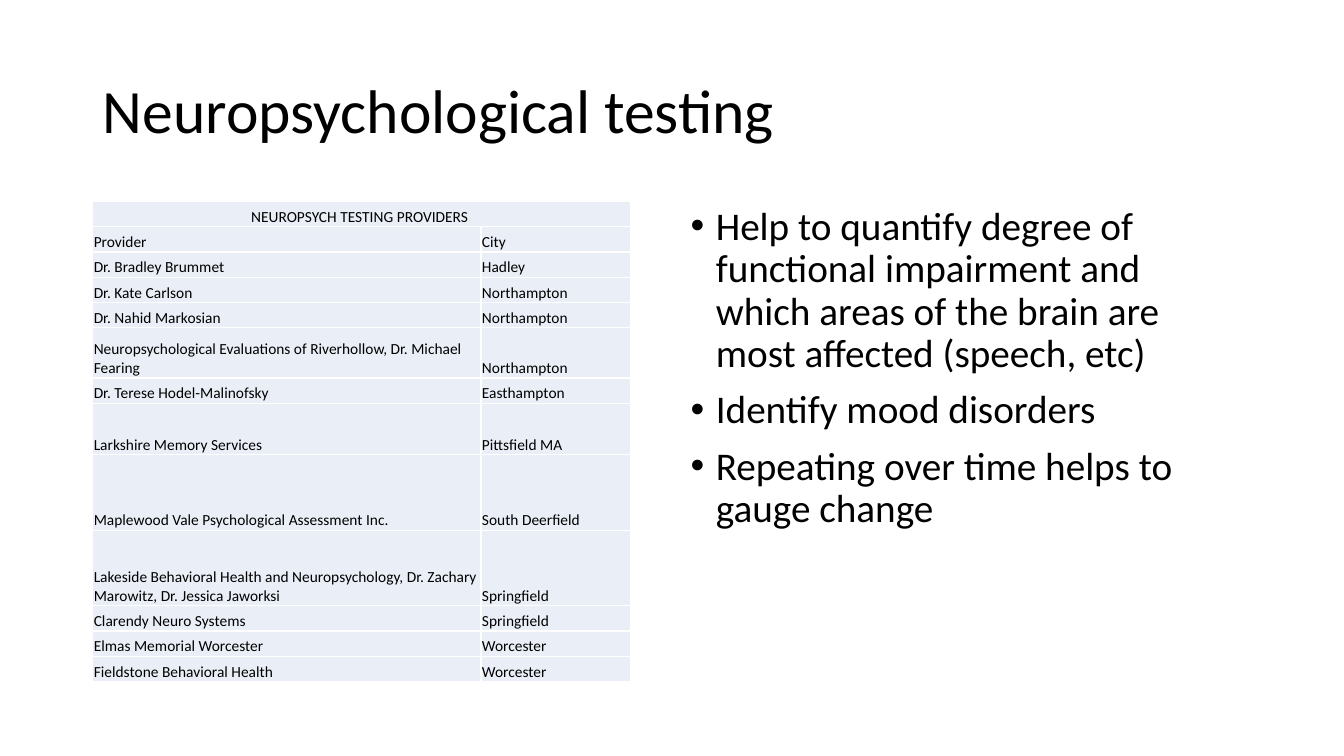
from lxml import etree
from pptx import Presentation
from pptx.dml.color import RGBColor
from pptx.enum.text import MSO_ANCHOR as Anchor, MSO_AUTO_SIZE as AutoSize, PP_ALIGN as Align
from pptx.oxml import parse_xml
from pptx.oxml.ns import nsdecls, qn
from pptx.util import Inches, Pt

FONT = "Calibri"
BLACK, WHITE, PALE_BLUE = "000000", "FFFFFF", "EAEFF7"

TABLE_TITLE = "NEUROPSYCH TESTING PROVIDERS "
# Provider, city, row height
PROVIDERS = [
    ("Provider", "City", 0.25),
    ("Dr. Bradley Brummet", "Hadley", 0.25),
    ("Dr. Kate Carlson", "Northampton", 0.25),
    ("Dr. Nahid Markosian", "Northampton", 0.25),
    ("Neuropsychological Evaluations of Riverhollow, Dr. Michael Fearing", "Northampton", 0.5),
    ("Dr. Terese Hodel-Malinofsky", "Easthampton", 0.25),
    ("Larkshire Memory Services", "Pittsfield MA", 0.51),
    ("Maplewood Vale Psychological Assessment Inc.", "South Deerfield", 0.75),
    ("Lakeside Behavioral Health and Neuropsychology, Dr. Zachary Marowitz, Dr. Jessica Jaworksi",
     "Springfield", 0.75),
    ("Clarendy Neuro Systems", "Springfield", 0.25),
    ("Elmas Memorial Worcester", "Worcester", 0.25),
    ("Fieldstone Behavioral Health", "Worcester", 0.25),
]
POINTS = [
    "Help to quantify degree of functional impairment and which areas of the brain are "
    "most affected (speech, etc)",
    "Identify mood disorders",
    "Repeating over time helps to gauge change",
]


def color(value):
    return RGBColor.from_string(value)


def add_span(para, text, size):
    span = para.add_run()
    span.text = text
    span.font.name = FONT
    span.font.size = Pt(size)
    span.font.color.rgb = color(BLACK)


def place(shape, box):
    shape.left, shape.top, shape.width, shape.height = (Inches(length) for length in box)
    shape.text_frame.word_wrap = True
    shape.text_frame.auto_size = AutoSize.NONE


def add_title(page, box, text):
    title = page.shapes.title
    place(title, box)
    title.text_frame.vertical_anchor = Anchor.MIDDLE
    para = title.text_frame.paragraphs[0]
    para.alignment = Align.LEFT
    para.line_spacing = 0.9
    add_span(para, text, 44)


def add_points(page, box, points):
    body = page.placeholders[1]
    place(body, box)
    frame = body.text_frame
    frame.vertical_anchor = Anchor.TOP
    for index, point in enumerate(points):
        para = frame.add_paragraph() if index else frame.paragraphs[0]
        para.line_spacing = 0.9
        para.space_before = Pt(10 if index else 0)
        # Hanging bullet
        props = para._p.get_or_add_pPr()
        props.set("marL", str(Inches(0.25)))
        props.set("indent", str(Inches(-0.25)))
        etree.SubElement(props, qn("a:buFont")).set("typeface", "Arial")
        etree.SubElement(props, qn("a:buChar")).set("char", "•")
        add_span(para, point, 28)


def style_cell(cell):
    cell.margin_left = cell.margin_right = cell.margin_top = Inches(0.01)
    cell.margin_bottom = 0
    cell.vertical_anchor = Anchor.BOTTOM
    # Borders come before the fill
    props = cell._tc.get_or_add_tcPr()
    for side in ("lnL", "lnR", "lnT", "lnB"):
        props.append(parse_xml(
            f'<a:{side} {nsdecls("a")} w="{Pt(1)}"><a:solidFill>'
            f'<a:srgbClr val="{WHITE}"/></a:solidFill></a:{side}>'))
    cell.fill.solid()
    cell.fill.fore_color.rgb = color(PALE_BLUE)


def add_providers(page, box, heading, providers):
    frame = page.shapes.add_table(len(providers) + 1, 2, *(Inches(length) for length in box))
    table = frame.table
    table.first_row = table.horz_banding = False
    city_width = 1.48
    table.columns[0].width = Inches(box[2] - city_width)
    table.columns[1].width = Inches(city_width)
    for cell in table.iter_cells():
        style_cell(cell)

    # Heading across both columns
    table.rows[0].height = Inches(0.25)
    table.cell(0, 0).merge(table.cell(0, 1))
    para = table.cell(0, 0).text_frame.paragraphs[0]
    para.alignment = Align.CENTER
    add_span(para, heading, 11)

    # Column names and providers
    for row, (*texts, height) in enumerate(providers, 1):
        table.rows[row].height = Inches(height)
        for column, text in enumerate(texts):
            add_span(table.cell(row, column).text_frame.paragraphs[0], text, 11)


def build_testing_page(deck):
    page = deck.slides.add_slide(deck.slide_layouts[1])
    page.background.fill.solid()
    page.background.fill.fore_color.rgb = color(WHITE)
    add_title(page, (0.92, 0.4, 11.5, 1.45), "Neuropsychological testing")
    add_providers(page, (0.92, 2, 5.33, 4.76), TABLE_TITLE, PROVIDERS)
    add_points(page, (6.75, 2, 5.67, 4.76), POINTS)


def main():
    deck = Presentation()
    deck.slide_width, deck.slide_height = Inches(13.33), Inches(7.5)
    build_testing_page(deck)
    deck.save("out.pptx")


if __name__ == "__main__":
    main()
